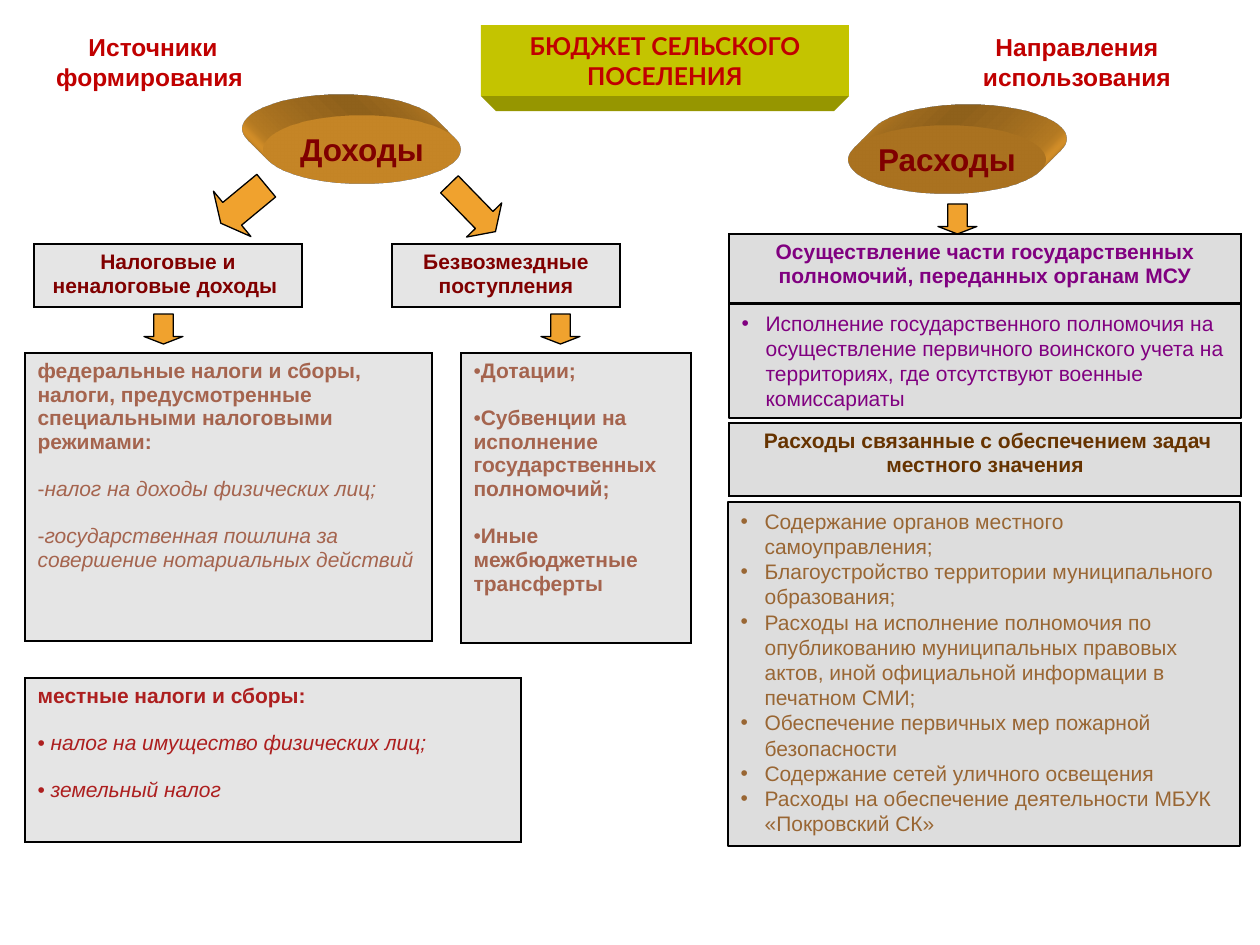
from dataclasses import dataclass

from lxml.etree import SubElement
from pptx import Presentation
from pptx.dml.color import RGBColor
from pptx.enum.shapes import MSO_SHAPE
from pptx.enum.text import MSO_ANCHOR, MSO_AUTO_SIZE, PP_ALIGN
from pptx.oxml.ns import qn
from pptx.util import Pt


@dataclass(frozen=True)
class Theme:
    font: str = "Arial"
    title_font: str = "Lato"
    black: str = "000000"
    red: str = "C00000"
    maroon: str = "800000"
    purple: str = "800080"
    clay: str = "A5644E"
    crimson: str = "AD1F1F"
    dark_brown: str = "663300"
    brown: str = "996633"
    orange: str = "F0A22E"
    olive: str = "C4C400"
    olive_dark: str = "969600"
    light_gray: str = "E5E5E5"
    gray: str = "DDDDDD"
    body_size: int = 12
    heading_size: int = 14
    oval_size: int = 18
    cell_pitch: float = 13.5
    list_pitch: float = 14.4
    heading_pitch: float = 17.1
    oval_pitch: float = 20.7


THEME = Theme()


def px(length: int) -> int:
    return round(length * 914400 / 126)


@dataclass(frozen=True)
class Box:
    left: int
    top: int
    width: int
    height: int

    def emu(self) -> tuple:
        return tuple(map(px, (self.left, self.top, self.width, self.height)))


@dataclass(frozen=True)
class Line:
    text: str
    bold: bool = True
    italic: bool = False
    bullet: str = ""
    indent: int = 0
    gap: float = 0


@dataclass(frozen=True)
class Style:
    color: str
    size: int = THEME.body_size
    pitch: float = THEME.cell_pitch
    align: PP_ALIGN = PP_ALIGN.LEFT
    font: str = THEME.font


@dataclass(frozen=True)
class Panel:
    box: Box
    fill: str
    style: Style
    lines: tuple


@dataclass(frozen=True)
class Arrow:
    box: Box
    rotation: float = 0
    head: float = 0.25


def rgb(color: str) -> RGBColor:
    return RGBColor.from_string(color)


def paint(shape, fill: str, line: str = "") -> None:
    shape.fill.solid()
    shape.fill.fore_color.rgb = rgb(fill)
    if line:
        shape.line.color.rgb = rgb(line)
        shape.line.width = Pt(0.75)
    else:
        shape.line.fill.background()


def write(frame, style: Style, lines: tuple) -> None:
    for index, line in enumerate(lines):
        paragraph = frame.paragraphs[0] if index == 0 else frame.add_paragraph()
        if line.bullet:
            properties = paragraph._p.get_or_add_pPr()
            properties.set("marL", str(px(line.indent)))
            properties.set("indent", str(-px(line.indent)))
            SubElement(properties, qn("a:buFont"), typeface=THEME.font)
            SubElement(properties, qn("a:buChar"), char=line.bullet)
        paragraph.alignment = style.align
        paragraph.line_spacing = Pt(style.pitch)
        paragraph.space_before = Pt(line.gap)
        run = paragraph.add_run()
        run.text = line.text
        font = run.font
        font.name, font.size = style.font, Pt(style.size)
        font.bold, font.italic = line.bold, line.italic
        font.color.rgb = rgb(style.color)


def place(shape, box: Box) -> None:
    shape.left, shape.top, shape.width, shape.height = box.emu()
    shape.text_frame.word_wrap = True
    shape.text_frame.auto_size = MSO_AUTO_SIZE.NONE


def add_panel(slide, panel: Panel) -> None:
    """Draw a bordered table of one cell."""
    table = slide.shapes.add_table(1, 1, *panel.box.emu()).table
    table.first_row = table.horz_banding = False
    cell = table.cell(0, 0)
    properties = cell._tc.get_or_add_tcPr()
    for side in ("a:lnL", "a:lnR", "a:lnT", "a:lnB"):
        border = SubElement(properties, qn(side), w=str(Pt(1)))
        SubElement(SubElement(border, qn("a:solidFill")), qn("a:srgbClr"), val=THEME.black)
    cell.fill.solid()
    cell.fill.fore_color.rgb = rgb(panel.fill)
    write(cell.text_frame, panel.style, panel.lines)


def fill_list(placeholder, panel: Panel) -> None:
    place(placeholder, panel.box)
    placeholder.text_frame.vertical_anchor = MSO_ANCHOR.TOP
    paint(placeholder, panel.fill, THEME.black)
    write(placeholder.text_frame, panel.style, panel.lines)


def add_heading(slide, box: Box, text: str) -> None:
    shape = slide.shapes.add_textbox(*box.emu())
    place(shape, box)
    write(shape.text_frame, HEADING, (Line(text),))


def add_preset(slide, preset: MSO_SHAPE, box: Box, fill: str, line: str = ""):
    shape = slide.shapes.add_shape(preset, *box.emu())
    shape.shadow.inherit = False
    paint(shape, fill, line)
    return shape


def extrude(shape, camera: str, color: str) -> None:
    properties = shape._element.spPr
    scene = SubElement(properties, qn("a:scene3d"))
    SubElement(scene, qn("a:camera"), prst=camera)
    SubElement(scene, qn("a:lightRig"), rig="legacyFlat3", dir="b")
    solid = SubElement(properties, qn("a:sp3d"), extrusionH="430200", prstMaterial="legacyMatte")
    for bevel in ("a:bevelT", "a:bevelB"):
        SubElement(solid, qn(bevel), w="13500", h="13500", prst="angle")
    SubElement(SubElement(solid, qn("a:extrusionClr")), qn("a:srgbClr"), val=color)


def add_oval(slide, box: Box, text: str, camera: str) -> None:
    oval = add_preset(slide, MSO_SHAPE.OVAL, box, THEME.orange)
    extrude(oval, camera, THEME.orange)
    oval.text_frame.word_wrap = False
    oval.text_frame.vertical_anchor = MSO_ANCHOR.MIDDLE
    write(oval.text_frame, OVAL, (Line(text),))


def add_arrow(slide, arrow: Arrow) -> None:
    shape = add_preset(slide, MSO_SHAPE.DOWN_ARROW, arrow.box, THEME.orange, THEME.black)
    shape.adjustments[0], shape.adjustments[1] = 0.5, arrow.head
    shape.rotation = arrow.rotation


def centered(color: str) -> Style:
    return Style(color, align=PP_ALIGN.CENTER)


def bullets(*texts: str) -> tuple:
    return tuple(Line(text, bold=False, bullet="•", indent=24) for text in texts)


HEADING = Style(THEME.red, THEME.heading_size, THEME.heading_pitch, PP_ALIGN.CENTER)
TITLE = Style(THEME.red, THEME.heading_size, THEME.heading_pitch, PP_ALIGN.CENTER, THEME.title_font)
OVAL = Style(THEME.maroon, THEME.oval_size, THEME.oval_pitch, PP_ALIGN.CENTER)
GAP = THEME.cell_pitch
PANELS = (
    Panel(Box(34, 244, 268, 63), THEME.light_gray, centered(THEME.maroon),
          (Line("Налоговые и неналоговые доходы "),)),
    Panel(Box(392, 244, 228, 63), THEME.light_gray, centered(THEME.maroon),
          (Line("Безвозмездные поступления"),)),
    Panel(Box(25, 353, 407, 288), THEME.light_gray, Style(THEME.clay), (
        Line("федеральные налоги и сборы, налоги, предусмотренные специальными налоговыми режимами:"),
        Line("налог на доходы физических лиц;", False, True, "-", gap=GAP),
        Line("государственная пошлина за совершение нотариальных действий", False, True, "-", gap=GAP))),
    Panel(Box(461, 353, 230, 290), THEME.light_gray, Style(THEME.clay), (
        Line("Дотации;", bullet="•"),
        Line("Субвенции на исполнение государственных полномочий;", bullet="•", gap=GAP),
        Line("Иные межбюджетные трансферты", bullet="•", gap=GAP))),
    Panel(Box(25, 678, 496, 164), THEME.light_gray, Style(THEME.crimson), (
        Line("местные налоги и сборы:"),
        Line("налог на имущество физических лиц;", False, True, "•", 13, GAP),
        Line("земельный налог", False, True, "•", 13, GAP))),
    Panel(Box(729, 234, 512, 69), THEME.gray, centered(THEME.purple),
          (Line("Осуществление части государственных полномочий, переданных органам МСУ"),)),
    Panel(Box(729, 423, 512, 73), THEME.gray, centered(THEME.dark_brown),
          (Line(" Расходы связанные с обеспечением задач местного значения"),)),
)
LISTS = (
    Panel(Box(729, 304, 512, 114), THEME.gray, Style(THEME.purple, pitch=THEME.list_pitch), bullets(
        "Исполнение государственного полномочия на осуществление первичного воинского учета "
        "на территориях, где отсутствуют военные комиссариаты")),
    Panel(Box(728, 502, 512, 344), THEME.gray, Style(THEME.brown, pitch=THEME.list_pitch), bullets(
        "Содержание органов местного самоуправления;",
        "Благоустройство территории муниципального образования;",
        "Расходы на исполнение полномочия по опубликованию муниципальных правовых актов, "
        "иной официальной информации в печатном СМИ;",
        "Обеспечение первичных мер пожарной безопасности",
        "Содержание сетей уличного освещения",
        "Расходы на обеспечение деятельности МБУК «Покровский СК»")),
)
ARROWS = (
    Arrow(Box(214, 175, 59, 59), 50.4),
    Arrow(Box(448, 175, 49, 66), 315.8, 0.33),
    *(Arrow(Box(left, top, 39, 30)) for left, top in ((144, 314), (541, 314), (938, 204))),
)


def main() -> None:
    presentation = Presentation()
    presentation.slide_width, presentation.slide_height = px(1260), px(945)
    slide = presentation.slides.add_slide(presentation.slide_layouts[3])
    title, *bodies = slide.placeholders
    place(title, Box(481, 25, 368, 71))
    title.text_frame.vertical_anchor = MSO_ANCHOR.MIDDLE
    paint(title, THEME.olive)
    write(title.text_frame, TITLE, (Line("БЮДЖЕТ СЕЛЬСКОГО ПОСЕЛЕНИЯ"),))
    title_depth = add_preset(slide, MSO_SHAPE.TRAPEZOID, Box(481, 96, 368, 15), THEME.olive_dark)
    title_depth.adjustments[0] = 1
    title_depth.rotation = 180
    for body, panel in zip(bodies, LISTS):
        fill_list(body, panel)
    add_heading(slide, Box(25, 25, 256, 72), "Источники формирования ")
    add_heading(slide, Box(938, 25, 278, 72), "Направления использования")
    for panel in PANELS:
        add_panel(slide, panel)
    add_oval(slide, Box(263, 115, 198, 69), "Доходы", "legacyObliqueTopLeft")
    add_oval(slide, Box(848, 125, 198, 69), "Расходы", "legacyObliqueTopRight")
    for arrow in ARROWS:
        add_arrow(slide, arrow)
    presentation.save("out.pptx")


if __name__ == "__main__":
    main()
